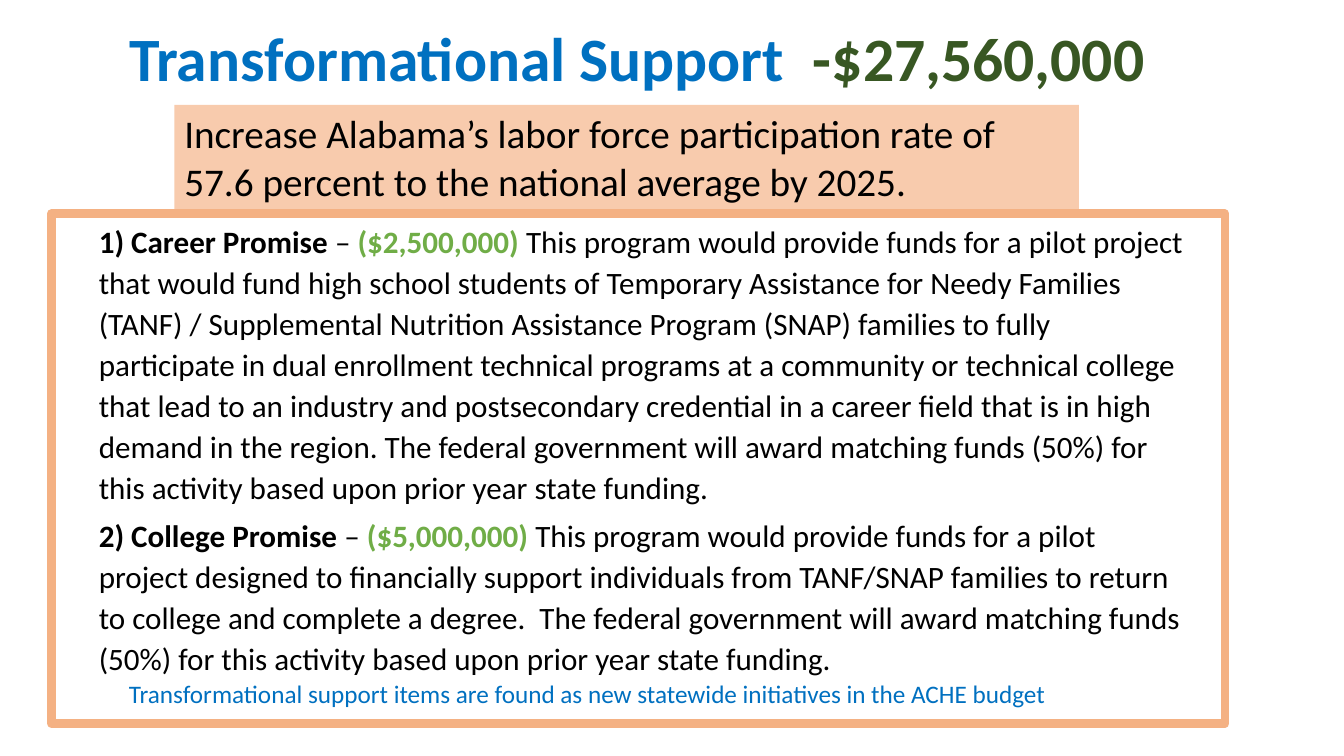
from dataclasses import dataclass
from typing import Optional

import lxml.etree
import pptx
import pptx.dml.color
import pptx.enum.shapes
import pptx.enum.text
import pptx.oxml.ns
import pptx.util

Inches = pptx.util.Inches


@dataclass(frozen=True)
class Theme:
    font: str = "Calibri"
    black: str = "000000"
    blue: str = "0070C0"
    dark_green: str = "385723"
    green: str = "70AD47"
    peach: str = "F8CBAD"
    orange: str = "F4B183"
    title_size: float = 44
    goal_size: float = 28
    body_size: float = 22.2
    note_size: float = 18


@dataclass(frozen=True)
class Box:
    left: float
    top: float
    width: float
    height: float

    def lengths(self) -> tuple:
        return tuple(Inches(v) for v in (self.left, self.top, self.width, self.height))


@dataclass(frozen=True)
class Program:
    name: str
    amount: str
    description: str


THEME = Theme()

PROGRAMS = [
    Program(
        "1) Career Promise",
        "($2,500,000) ",
        "This program would provide funds for a pilot project that would fund high school "
        "students of Temporary Assistance for Needy Families (TANF) / Supplemental Nutrition "
        "Assistance Program (SNAP) families to fully participate in dual enrollment technical "
        "programs at a community or technical college that lead to an industry and "
        "postsecondary credential in a career field that is in high demand in the region. "
        "The federal government will award matching funds (50%) for this activity based upon "
        "prior year state funding.",
    ),
    Program(
        "2) College Promise",
        "($5,000,000) ",
        "This program would provide funds for a pilot project designed to financially support "
        "individuals from TANF/SNAP families to return to college and complete a degree.  "
        "The federal government will award matching funds (50%) for this activity based upon "
        "prior year state funding.",
    ),
]


def rgb(color: str) -> pptx.dml.color.RGBColor:
    return pptx.dml.color.RGBColor.from_string(color)


def add_text(paragraph, text: str, *, size: float, color: str = THEME.black,
             bold: bool = False) -> None:
    run = paragraph.add_run()
    run.text = text
    run.font.name = THEME.font
    run.font.size = pptx.util.Pt(size)
    run.font.bold = bold
    run.font.color.rgb = rgb(color)


def place(shape, box: Box, anchor=pptx.enum.text.MSO_ANCHOR.TOP):
    shape.left, shape.top, shape.width, shape.height = box.lengths()
    frame = shape.text_frame
    frame.word_wrap = True
    frame.auto_size = pptx.enum.text.MSO_AUTO_SIZE.NONE
    frame.vertical_anchor = anchor
    paragraph = frame.paragraphs[0]
    paragraph.alignment = pptx.enum.text.PP_ALIGN.LEFT
    return paragraph


def add_rectangle(slide, box: Box, *, fill: Optional[str] = None,
                  line: Optional[str] = None, line_width: float = 0):
    rectangle = slide.shapes.add_shape(
        pptx.enum.shapes.MSO_SHAPE.RECTANGLE, *box.lengths())
    rectangle.shadow.inherit = False
    if fill:
        rectangle.fill.solid()
        rectangle.fill.fore_color.rgb = rgb(fill)
    else:
        rectangle.fill.background()
    if line:
        rectangle.line.color.rgb = rgb(line)
        rectangle.line.width = pptx.util.Pt(line_width)
    else:
        rectangle.line.fill.background()
    return rectangle


def add_program(paragraph, program: Program) -> None:
    paragraph.level = 1
    paragraph.alignment = pptx.enum.text.PP_ALIGN.LEFT
    paragraph.line_spacing = 1.1
    paragraph.space_before = pptx.util.Pt(5)
    properties = paragraph._p.get_or_add_pPr()
    properties.set("marL", str(Inches(0.5)))
    properties.set("indent", "0")
    lxml.etree.SubElement(properties, pptx.oxml.ns.qn("a:buNone"))
    size = THEME.body_size
    add_text(paragraph, program.name, size=size, bold=True)
    add_text(paragraph, " – ", size=size)
    add_text(paragraph, program.amount, size=size, color=THEME.green, bold=True)
    add_text(paragraph, program.description, size=size)


def main() -> None:
    presentation = pptx.Presentation()
    presentation.slide_width = Inches(13.33)
    presentation.slide_height = Inches(7.5)
    slide = presentation.slides.add_slide(presentation.slide_layouts[1])

    programs = slide.placeholders[1]
    paragraph = place(programs, Box(0.38, 2.12, 11.5, 4.76))
    for number, program in enumerate(PROGRAMS):
        if number:
            paragraph = programs.text_frame.add_paragraph()
        add_program(paragraph, program)

    heading = place(slide.shapes.title, Box(1.18, 0.16, 11.5, 0.9),
                    pptx.enum.text.MSO_ANCHOR.MIDDLE)
    heading.line_spacing = 0.9
    add_text(heading, "Transformational Support  ", size=THEME.title_size,
             color=THEME.blue, bold=True)
    add_text(heading, "-$27,560,000", size=THEME.title_size,
             color=THEME.dark_green, bold=True)

    note_box = Box(1.18, 6.68, 9.71, 0.4)
    note = place(slide.shapes.add_textbox(*note_box.lengths()), note_box)
    add_text(note, "Transformational support items are found as new statewide "
             "initiatives in the ACHE budget", size=THEME.note_size, color=THEME.blue)

    goal_box = Box(1.73, 1.04, 8.97, 1.04)
    goal = place(add_rectangle(slide, goal_box, fill=THEME.peach), goal_box)
    add_text(goal, "Increase Alabama’s labor force participation rate of 57.6 percent "
             "to the national average by 2025.", size=THEME.goal_size)

    add_rectangle(slide, Box(0.51, 2.12, 11.64, 5.06), line=THEME.orange, line_width=6)
    presentation.save("out.pptx")


if __name__ == "__main__":
    main()
